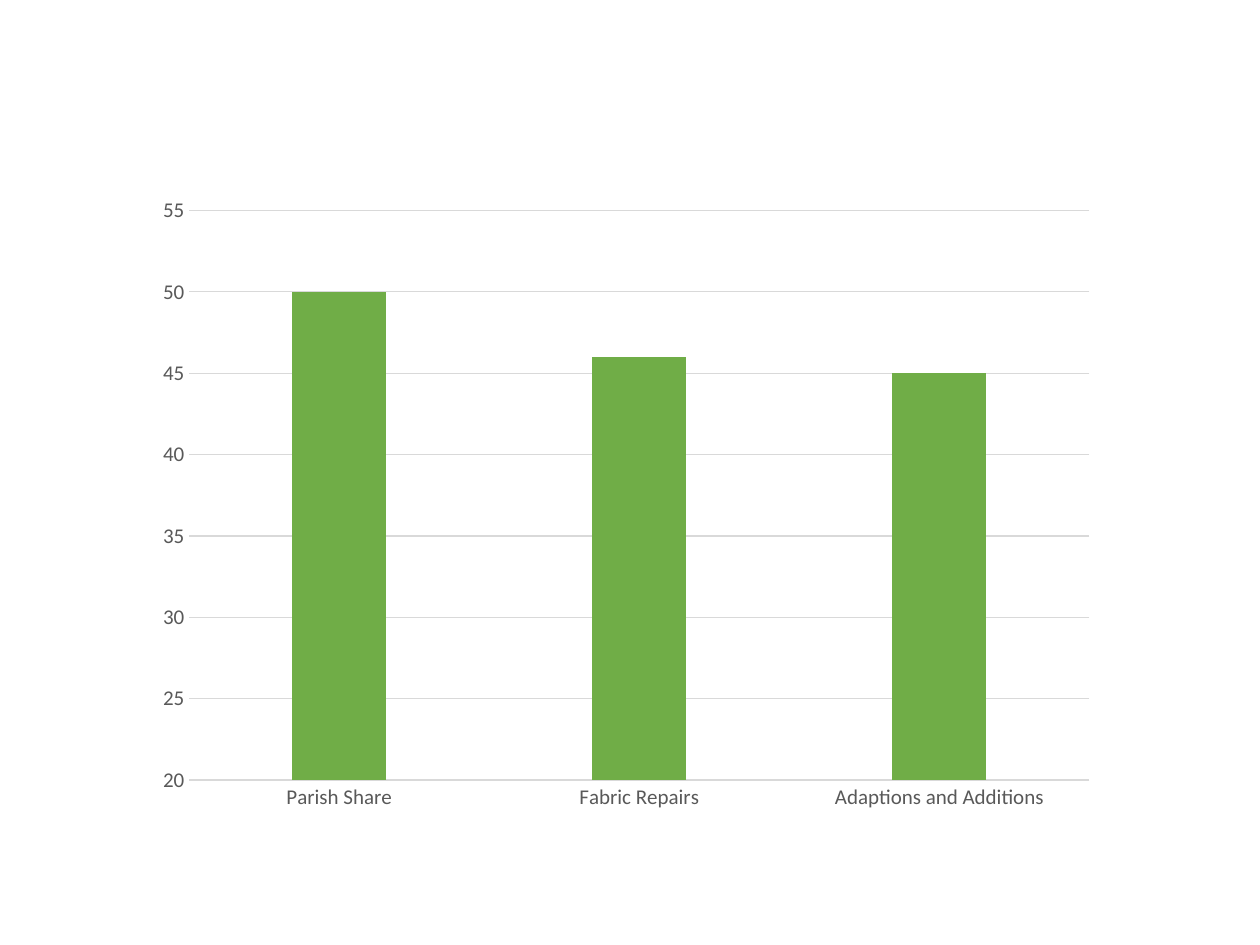
from pptx import Presentation
from pptx.chart.data import CategoryChartData
from pptx.dml.color import RGBColor
from pptx.enum.chart import XL_CHART_TYPE, XL_TICK_MARK
from pptx.util import Inches, Pt

GREEN = RGBColor(0x70, 0xAD, 0x47)
GRAY = RGBColor(0x59, 0x59, 0x59)
PALE = RGBColor(0xD9, 0xD9, 0xD9)
BLACK = RGBColor(0, 0, 0)


class Deck:
    """Style and current slide."""
    face = "Calibri"

    def __init__(self, slide):
        self.slide = slide

    def font(self, font, size, color):
        font.name = self.face
        font.size = Pt(size)
        font.color.rgb = color

    def line(self, line):
        line.color.rgb = PALE
        line.width = Pt(0.75)

    def axis(self, axis):
        axis.major_tick_mark = axis.minor_tick_mark = XL_TICK_MARK.NONE
        self.font(axis.tick_labels.font, 12, GRAY)

    def columns(self, left, top, width, height, names, values):
        data = CategoryChartData()
        data.categories = names
        data.add_series("Series 1", values)
        chart = self.slide.shapes.add_chart(
            XL_CHART_TYPE.COLUMN_CLUSTERED, Inches(left), Inches(top),
            Inches(width), Inches(height), data).chart
        chart.has_title = False
        chart.has_legend = False
        self.font(chart.font, 10, BLACK)

        # Bars
        plot = chart.plots[0]
        plot.vary_by_categories = False
        plot.gap_width = 219
        plot.overlap = -27
        fill = plot.series[0].format.fill
        fill.solid()
        fill.fore_color.rgb = GREEN

        # Axes and grid
        base, scale = chart.category_axis, chart.value_axis
        self.axis(base)
        self.axis(scale)
        self.line(base.format.line)
        scale.format.line.fill.background()
        scale.minimum_scale = 20
        scale.maximum_scale = 55
        scale.major_unit = 5
        scale.has_major_gridlines = True
        self.line(scale.major_gridlines.format.line)


def main():
    prs = Presentation()
    prs.slide_width, prs.slide_height = Inches(10), Inches(7.5)
    deck = Deck(prs.slides.add_slide(prs.slide_layouts[6]))

    # Column chart
    deck.columns(1.14, 1.47, 7.66, 5.06,
                 ["Parish Share", "Fabric Repairs", "Adaptions and Additions"],
                 [50, 46, 45])
    prs.save("out.pptx")


if __name__ == "__main__":
    main()
